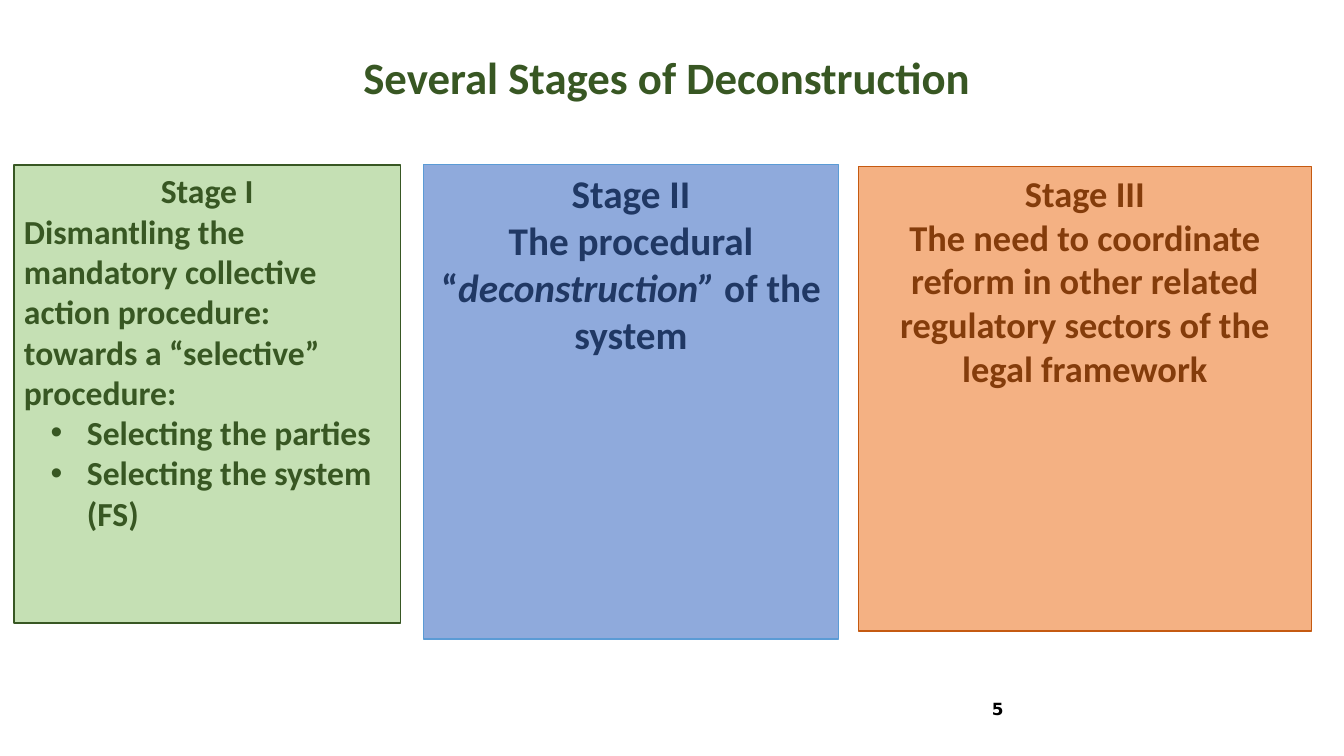
import pptx
import pptx.dml.color
import pptx.enum.shapes
import pptx.enum.text
import pptx.oxml.ns
import pptx.util
from lxml import etree

Pt = pptx.util.Pt
ALIGN = pptx.enum.text.PP_ALIGN
ANCHOR = pptx.enum.text.MSO_ANCHOR

STAGES = [
    {
        "box": (10, 118, 276, 327),
        "colours": ("C5E0B4", "385723", "385723"),
        "size": 24,
        "heading": "Stage I",
        "body": [("Dismantling the mandatory collective action procedure: "
                  "towards a “selective” procedure:", False)],
        "body_alignment": ALIGN.LEFT,
        "bullets": ["Selecting the parties", "Selecting the system (FS)"],
    },
    {
        "box": (302.4, 117.4, 296.6, 339),
        "colours": ("8FAADC", "5B9BD5", "203864"),
        "size": 28,
        "heading": "Stage II",
        "body": [("The procedural “", False), ("deconstruction”", True),
                 (" of the system", False)],
        "body_alignment": ALIGN.CENTER,
        "bullets": [],
    },
    {
        "box": (613.4, 118.8, 323.3, 332),
        "colours": ("F4B183", "C55A11", "843C0B"),
        "size": 26,
        "heading": "Stage III",
        "body": [("The need to coordinate reform in other related regulatory "
                  "sectors of the legal framework", False)],
        "body_alignment": ALIGN.CENTER,
        "bullets": [],
    },
]


def set_colour(colour_format, value):
    colour_format.rgb = pptx.dml.color.RGBColor.from_string(value)


def style_paragraph(paragraph, size, colour, alignment, font_name="Calibri"):
    paragraph.alignment = alignment
    paragraph.font.name = font_name
    paragraph.font.size = Pt(size)
    paragraph.font.bold = True
    set_colour(paragraph.font.color, colour)


def add_bullet(paragraph):
    paragraph.level = 1
    properties = paragraph._p.get_or_add_pPr()
    properties.set("marL", str(Pt(45)))
    properties.set("indent", str(-Pt(26)))
    font = etree.Element(pptx.oxml.ns.qn("a:buFont"), typeface="Arial")
    bullet = etree.Element(pptx.oxml.ns.qn("a:buChar"), char="•")
    position = 0
    for element in (font, bullet):
        properties.insert(position, element)
        position += 1


def add_label(slide, box, text, size, colour, alignment, font_name, anchor):
    label = slide.shapes.add_textbox(*map(Pt, box))
    frame = label.text_frame
    frame.word_wrap = True
    frame.vertical_anchor = anchor
    paragraph = frame.paragraphs[0]
    paragraph.text = text
    style_paragraph(paragraph, size, colour, alignment, font_name)


def add_stage(slide, stage):
    fill, line, text_colour = stage["colours"]
    shape = slide.shapes.add_shape(
        pptx.enum.shapes.MSO_SHAPE.RECTANGLE, *map(Pt, stage["box"]))
    shape.shadow.inherit = False
    shape.fill.solid()
    set_colour(shape.fill.fore_color, fill)
    set_colour(shape.line.color, line)
    shape.line.width = Pt(1)

    frame = shape.text_frame
    frame.word_wrap = True
    frame.vertical_anchor = ANCHOR.TOP
    heading = frame.paragraphs[0]
    heading.text = stage["heading"]
    style_paragraph(heading, stage["size"], text_colour, ALIGN.CENTER)

    body = frame.add_paragraph()
    style_paragraph(body, stage["size"], text_colour, stage["body_alignment"])
    for text, italic in stage["body"]:
        run = body.add_run()
        run.text = text
        if italic:
            run.font.italic = True

    for text in stage["bullets"]:
        paragraph = frame.add_paragraph()
        paragraph.text = text
        style_paragraph(paragraph, stage["size"], text_colour, ALIGN.LEFT)
        add_bullet(paragraph)


def main():
    presentation = pptx.Presentation()
    presentation.slide_width = Pt(960)
    presentation.slide_height = Pt(540)
    slide = presentation.slides.add_slide(presentation.slide_layouts[6])
    add_label(slide, (628, 492, 96, 29), "5", 12, "000000",
              ALIGN.RIGHT, "DejaVu Sans", ANCHOR.MIDDLE)
    add_label(slide, (0, 32, 960, 46), "Several Stages of Deconstruction ", 32,
              "385723", ALIGN.CENTER, "Calibri", ANCHOR.TOP)
    for stage in STAGES:
        add_stage(slide, stage)
    presentation.save("out.pptx")


if __name__ == "__main__":
    main()
